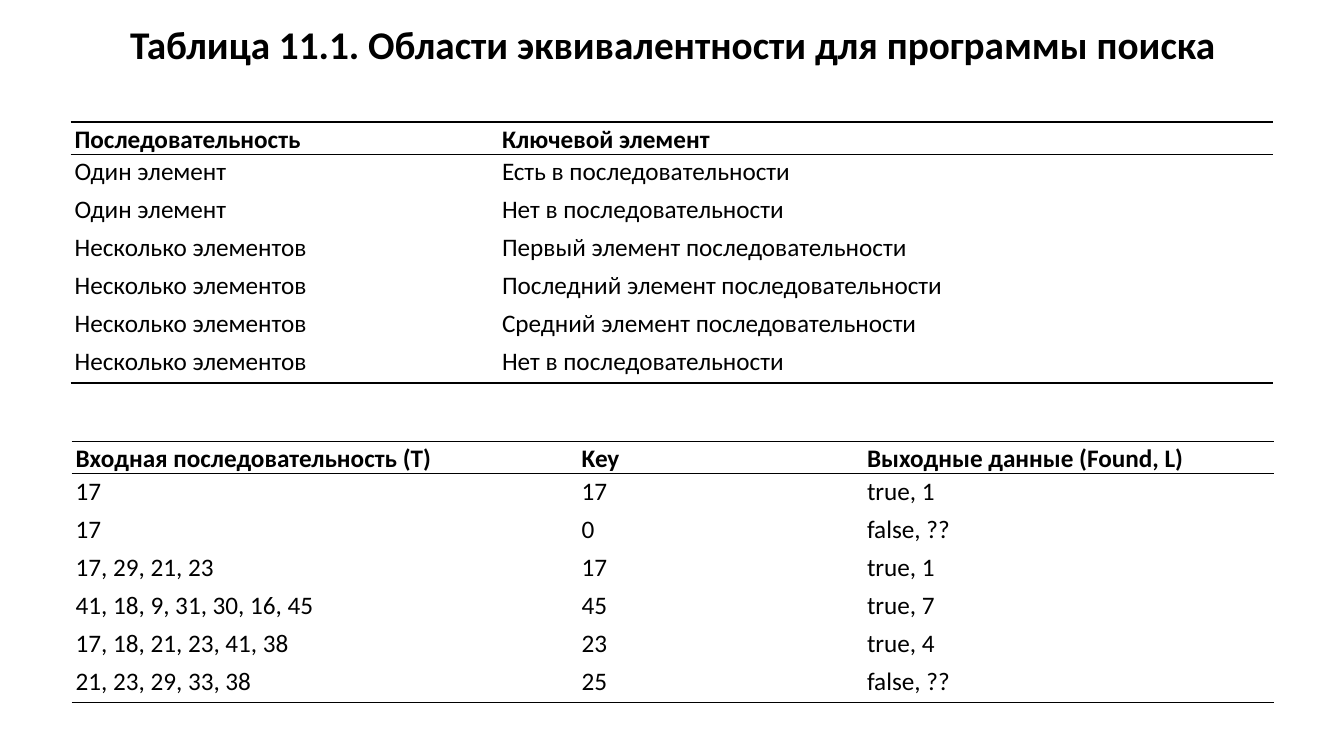
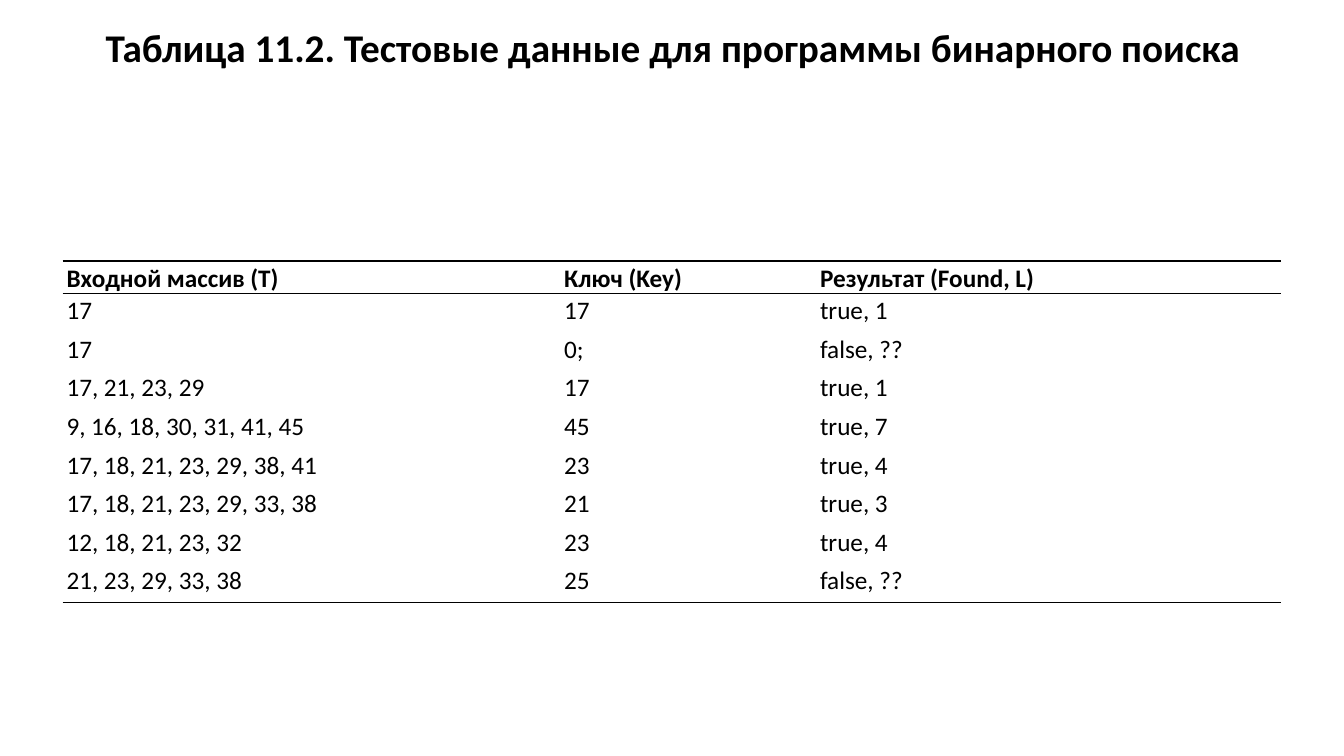
from dataclasses import dataclass

from lxml import etree
from pptx import Presentation
from pptx.dml.color import RGBColor
from pptx.enum.text import MSO_ANCHOR, PP_ALIGN
from pptx.oxml.ns import qn
from pptx.util import Inches, Pt

CENTER = PP_ALIGN.CENTER
TOP = MSO_ANCHOR.TOP
BLANK = 6


@dataclass(frozen=True)
class Theme:
    font: str = "Calibri"
    ink: str = "000000"
    paper: str = "FFFFFF"
    title_size: int = 28
    table_size: int = 18
    rule: int = 1
    cell_inset: float = 0.04
    header_share: float = 0.82  # header height relative to a body row


THEME = Theme()

SEARCH_CLASSES = [
    ("Последовательность", "Ключевой элемент"),
    ("Один элемент", "Есть в последовательности"),
    ("Один элемент", "Нет в последовательности"),
    ("Несколько элементов", "Первый элемент последовательности"),
    ("Несколько элементов", "Последний элемент последовательности"),
    ("Несколько элементов", "Средний элемент последовательности"),
    ("Несколько элементов", "Нет в последовательности"),
]
SEARCH_TESTS = [
    ("Входная последовательность (Т)", "Key", "Выходные данные (Found, L)"),
    ("17", "17", "true, 1"),
    ("17", "0", "false, ??"),
    ("17, 29, 21, 23", "17", "true, 1"),
    ("41, 18, 9, 31, 30, 16, 45", "45", "true, 7"),
    ("17, 18, 21, 23, 41, 38", "23", "true, 4"),
    ("21, 23, 29, 33, 38", "25", "false, ??"),
]
BINARY_TESTS = [
    ("Входной массив (Т)", "Ключ (Key)", "Результат (Found, L)"),
    ("17", "17", "true, 1"),
    ("17", "0;", "false, ??"),
    ("17, 21, 23, 29", "17", "true, 1"),
    ("9, 16, 18, 30, 31, 41, 45", "45", "true, 7"),
    ("17, 18, 21, 23, 29, 38, 41", "23", "true, 4"),
    ("17, 18, 21, 23, 29, 33, 38", "21", "true, 3"),
    ("12, 18, 21, 23, 32", "23", "true, 4"),
    ("21, 23, 29, 33, 38", "25", "false, ??"),
]

# Each slide: title, title box, title line spacing, then (box, column weights, rows).
SLIDES = [
    ("Таблица 11.1. Области эквивалентности для программы поиска",
     (0.92, 0.2, 11.5, 0.61), 0.9,
     [((0.7, 1.21, 11.93, 2.58), (4.24, 7.69), SEARCH_CLASSES),
      ((0.71, 4.38, 11.93, 2.58), (5.02, 2.83, 4.08), SEARCH_TESTS)]),
    ("Таблица 11.2. Тестовые данные для программы бинарного поиска",
     (0.92, 0.27, 11.5, 0.52), 0.8,
     [((0.62, 2.59, 12.09, 3.38), (4.94, 2.54, 4.62), BINARY_TESTS)]),
]


def style_font(p, size, bold):
    p.font.name = THEME.font
    p.font.size = Pt(size)
    p.font.bold = bold
    p.font.color.rgb = RGBColor.from_string(THEME.ink)


def add_title(slide, text, box, line_spacing):
    tf = slide.shapes.add_textbox(*map(Inches, box)).text_frame
    tf.word_wrap = True
    tf.vertical_anchor = TOP
    p = tf.paragraphs[0]
    p.text = text
    p.alignment = CENTER
    p.line_spacing = line_spacing
    p.space_before = Pt(10)
    style_font(p, THEME.title_size, True)


def set_borders(cell, ruled):
    """Draw rules on the sides named in ruled and clear the others."""
    tc_pr = cell._tc.get_or_add_tcPr()
    for side in ("lnL", "lnR", "lnT", "lnB"):
        ln = etree.SubElement(tc_pr, qn(f"a:{side}"), w=str(Pt(THEME.rule)))
        if side in ruled:
            fill = etree.SubElement(ln, qn("a:solidFill"))
            etree.SubElement(fill, qn("a:srgbClr"), val=THEME.ink)
        else:
            etree.SubElement(ln, qn("a:noFill"))


def fill_cell(cell, text, header, ruled):
    set_borders(cell, ruled)
    cell.fill.solid()
    cell.fill.fore_color.rgb = RGBColor.from_string(THEME.paper)
    cell.margin_left = cell.margin_right = Inches(THEME.cell_inset)
    cell.margin_top = cell.margin_bottom = 0
    cell.vertical_anchor = TOP
    p = cell.text_frame.paragraphs[0]
    p.text = text
    p.line_spacing = 1.07
    p.space_after = Pt(8)
    style_font(p, THEME.table_size, header)


def add_ruled_table(slide, box, weights, rows):
    """Table with rules around the header and below the last row."""
    _, _, width, height = box
    table = slide.shapes.add_table(len(rows), len(weights), *map(Inches, box)).table
    table.first_row = table.horz_banding = False
    for column, weight in zip(table.columns, weights):
        column.width = Inches(width * weight / sum(weights))
    last = len(rows) - 1
    body_height = height / (last + THEME.header_share)
    rules = {0: ("lnT", "lnB"), 1: ("lnT",), last: ("lnB",)}
    for i, texts in enumerate(rows):
        table.rows[i].height = Inches(body_height * (1 if i else THEME.header_share))
        for j, text in enumerate(texts):
            fill_cell(table.cell(i, j), text, i == 0, rules.get(i, ()))


def add_table_slide(prs, title, title_box, line_spacing, tables):
    slide = prs.slides.add_slide(prs.slide_layouts[BLANK])
    add_title(slide, title, title_box, line_spacing)
    for table in tables:
        add_ruled_table(slide, *table)


def main():
    prs = Presentation()
    prs.slide_width, prs.slide_height = Inches(13.33), Inches(7.5)
    for content in SLIDES:
        add_table_slide(prs, *content)
    prs.save("out.pptx")


if __name__ == "__main__":
    main()
